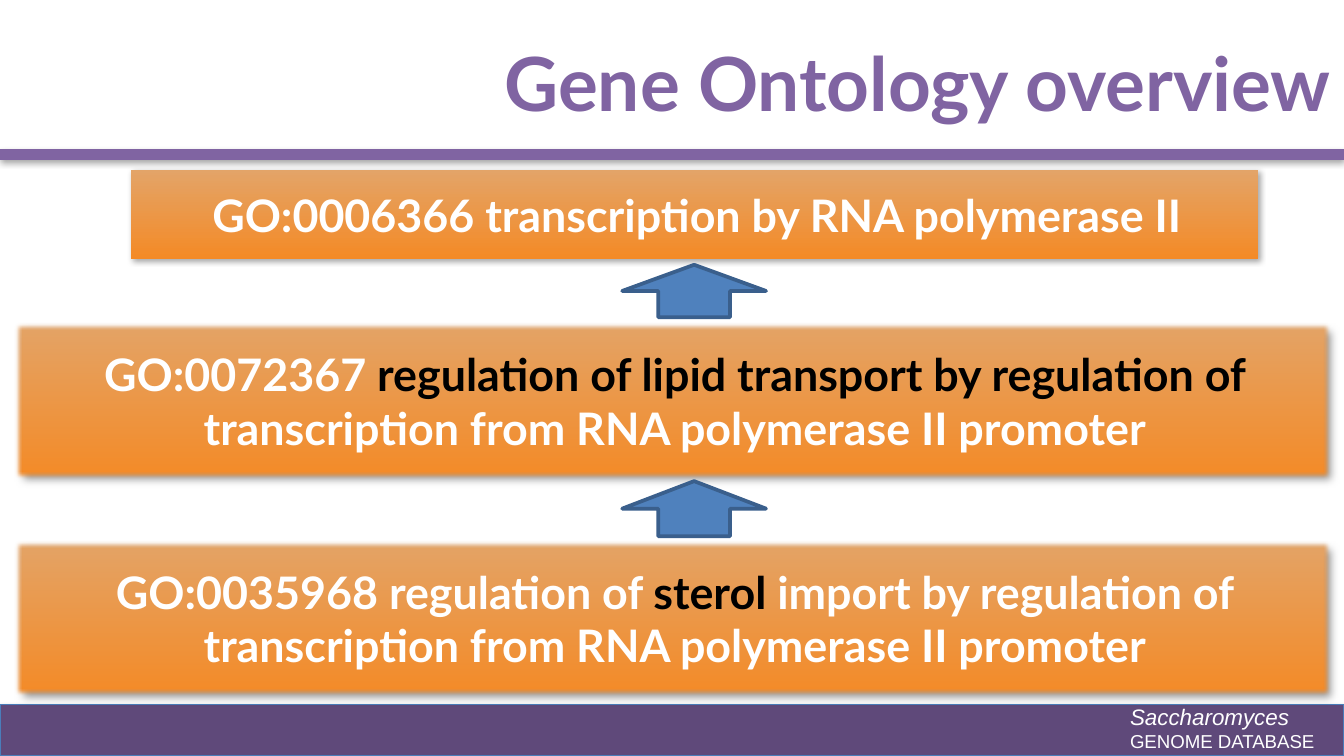
"""Build the Gene Ontology overview slide: three linked terms above a footer band."""
from dataclasses import dataclass

from lxml import etree
from pptx import Presentation
from pptx import util as u
from pptx.dml.color import RGBColor
from pptx.enum import shapes, text
from pptx.oxml.ns import qn

COLORS = {
    "white": "FFFFFF", "black": "000000", "purple": "8064A2", "footer": "5F497A",
    "footer_line": "4A7DBA", "term_low": "F48A26", "term_high": "E3A468",
    "arrow": "4F81BD", "arrow_line": "3A5F8C",
}
COLUMNS = 1000
CELL = u.Inches(0.01)
SLIDE_WIDTH = COLUMNS * CELL
SLIDE_HEIGHT = SLIDE_WIDTH * 9 // 16


@dataclass(frozen=True)
class Area:
    column: float
    row: float
    columns: float
    rows: float

    def lengths(self) -> tuple[int, ...]:
        return tuple(int(n * CELL) for n in (self.column, self.row, self.columns, self.rows))


@dataclass(frozen=True)
class Shadow:
    opacity: int
    blur: float
    distance: float
    angle: int
    soft_edge: float = 0


@dataclass(frozen=True)
class Term:
    area: Area
    shadow: Shadow
    spans: tuple[tuple[str, str], ...]


BAR_SHADOW = Shadow(35, 3.1, 1.8, 90)
TOP_SHADOW = Shadow(35, 3, 1, 45)
TERM_SHADOW = Shadow(40, 4, 3, 45, soft_edge=2.5)
TERMS = (
    Term(Area(97.4, 126.4, 839, 66.6), TOP_SHADOW,
         (("GO:0006366 transcription by RNA polymerase II", "white"),)),
    Term(Area(11, 402, 979, 116), TERM_SHADOW,
         (("GO:0035968 regulation of ", "white"), ("sterol", "black"),
          (" import by regulation of transcription from RNA polymerase II promoter",
           "white"))),
    Term(Area(11, 240, 979, 116), TERM_SHADOW,
         (("GO:0072367 ", "white"),
          ("regulation of lipid transport by regulation of ", "black"),
          ("transcription from RNA polymerase II promoter", "white"))),
)
ARROWS = (Area(463, 197, 107, 39), Area(463, 358, 107, 41))


def rgb(name: str) -> RGBColor:
    return RGBColor.from_string(COLORS[name])


def style(font, size: float, face: str, color: str, bold=False, italic=False) -> None:
    font.size, font.name, font.bold, font.italic = u.Pt(size), face, bold, italic
    font.color.rgb = rgb(color)


def add_shadow(shape, shadow: Shadow) -> None:
    effects = shape._element.spPr.find(qn("a:effectLst"))
    outer = etree.SubElement(
        effects, qn("a:outerShdw"), blurRad=str(u.Pt(shadow.blur)),
        dist=str(u.Pt(shadow.distance)), dir=str(shadow.angle * 60000),
        algn="ctr", rotWithShape="0")
    color = etree.SubElement(outer, qn("a:srgbClr"), val=COLORS["black"])
    etree.SubElement(color, qn("a:alpha"), val=str(shadow.opacity * 1000))
    if shadow.soft_edge:
        etree.SubElement(effects, qn("a:softEdge"), rad=str(u.Pt(shadow.soft_edge)))


def add_block(page, area: Area, fill: str | None, line: str | None = None,
              width: float = 0, shadow: Shadow | None = None,
              kind=shapes.MSO_SHAPE.RECTANGLE):
    shape = page.shapes.add_shape(kind, *area.lengths())
    shape.shadow.inherit = False
    if fill:
        shape.fill.solid()
        shape.fill.fore_color.rgb = rgb(fill)
    if line:
        shape.line.color.rgb = rgb(line)
        shape.line.width = u.Pt(width)
    else:
        shape.line.fill.background()
    if shadow:
        add_shadow(shape, shadow)
    return shape


def add_term(page, term: Term) -> None:
    box = add_block(page, term.area, None, shadow=term.shadow)
    box.fill.gradient()
    box.fill.gradient_angle = 90
    for stop, position, color in zip(box.fill.gradient_stops, (0, 1),
                                     ("term_low", "term_high")):
        stop.position = position
        stop.color.rgb = rgb(color)
    frame = box.text_frame
    frame.word_wrap = True
    frame.vertical_anchor = text.MSO_ANCHOR.MIDDLE
    para = frame.paragraphs[0]
    para.alignment = text.PP_ALIGN.CENTER
    para._p.get_or_add_pPr().set("marL", str(3 * CELL))
    for words, color in term.spans:
        span = para.add_run()
        span.text = words
        style(span.font, 24, "Lato", color, bold=True)


def add_title(page, words: str) -> None:
    title = page.shapes.title
    title.left, title.top, title.width, title.height = Area(0, 2, 1000, 117).lengths()
    frame = title.text_frame
    frame.text = words
    frame.auto_size = text.MSO_AUTO_SIZE.NONE
    frame.vertical_anchor = text.MSO_ANCHOR.MIDDLE
    para = frame.paragraphs[0]
    para.alignment = text.PP_ALIGN.RIGHT
    style(para.runs[0].font, 40, "Lato", "purple", bold=True)


def add_footer(page) -> None:
    add_block(page, Area(0, 524, COLUMNS, 38), "footer", "footer_line", 0.75, BAR_SHADOW)
    frame = page.shapes.add_textbox(*Area(831, 518.5, 214, 47).lengths()).text_frame
    frame.word_wrap = True
    frame.text = "Saccharomyces\nGENOME DATABASE"
    for para, size, italic in zip(frame.paragraphs, (12, 10), (True, False)):
        style(para.runs[0].font, size, "Arial", "white", italic=italic)


def main() -> None:
    deck = Presentation()
    deck.slide_width, deck.slide_height = SLIDE_WIDTH, SLIDE_HEIGHT
    page = deck.slides.add_slide(deck.slide_layouts.get_by_name("Title Only"))
    add_footer(page)
    add_title(page, "Gene Ontology overview")
    add_block(page, Area(0, 111, COLUMNS, 8), "purple", shadow=BAR_SHADOW)
    for term in TERMS:
        add_term(page, term)
    for area in ARROWS:
        add_block(page, area, "arrow", "arrow_line", 2, kind=shapes.MSO_SHAPE.UP_ARROW)
    deck.save("out.pptx")


if __name__ == "__main__":
    main()
